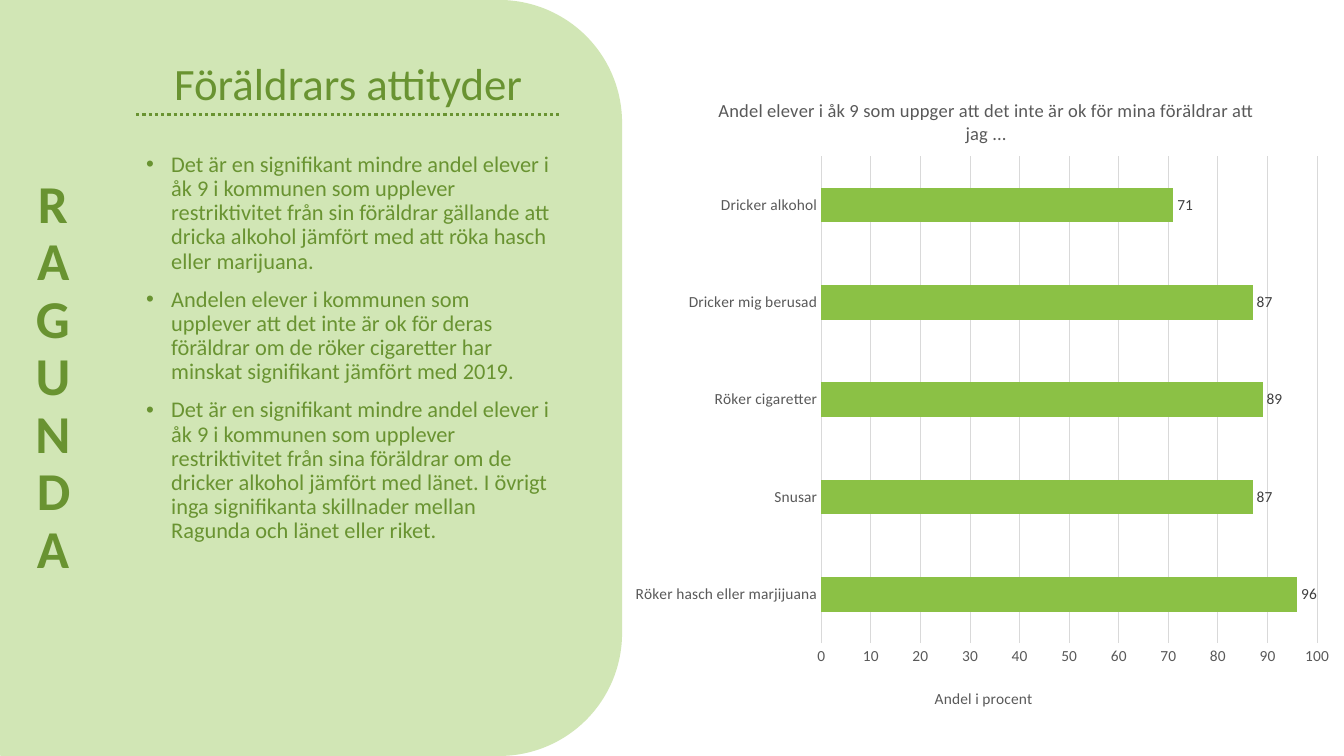
import lxml.etree
import pptx
import pptx.chart.data
import pptx.dml.color
import pptx.enum.chart
import pptx.enum.dml
import pptx.enum.shapes
import pptx.enum.text
import pptx.oxml
import pptx.oxml.ns
import pptx.util

Inches = pptx.util.Inches
Pt = pptx.util.Pt
qn = pptx.oxml.ns.qn

FONT = "Calibri"
COLORS = {
    "panel": "D1E6B5",
    "green": "699331",
    "bar": "8BC145",
    "axis": "595959",
    "value": "404040",
    "grid": "D9D9D9",
}
FINDINGS = [
    "Det är en signifikant mindre andel elever i åk 9 i kommunen som upplever restriktivitet "
    "från sin föräldrar gällande att dricka alkohol jämfört med att röka hasch eller marijuana.",
    "Andelen elever i kommunen som upplever att det inte är ok för deras föräldrar om de röker "
    "cigaretter har minskat signifikant jämfört med 2019.",
    "Det är en signifikant mindre andel elever i åk 9 i kommunen som upplever restriktivitet "
    "från sina föräldrar om de dricker alkohol jämfört med länet. I övrigt inga signifikanta "
    "skillnader mellan Ragunda och länet eller riket.",
]
SHARES = {
    "Röker hasch eller marjijuana": 96,
    "Snusar": 87,
    "Röker cigaretter": 89,
    "Dricker mig berusad": 87,
    "Dricker alkohol": 71,
}


def color(name):
    """Return the named colour."""
    return pptx.dml.color.RGBColor.from_string(COLORS[name])


def style_font(font, size, name, bold=False):
    """Apply the slide font with a size and colour."""
    font.name = FONT
    font.size = Pt(size)
    font.bold = bold
    font.color.rgb = color(name)


def add_text(slide, box, paragraphs, size, align, anchor, bold=False):
    """Add a wrapping green text box and return its text frame."""
    frame = slide.shapes.add_textbox(*map(Inches, box)).text_frame
    frame.word_wrap = True
    frame.vertical_anchor = anchor
    frame.text = "\n".join(paragraphs)
    for paragraph in frame.paragraphs:
        paragraph.alignment = align
        paragraph.line_spacing = 0.9
        style_font(paragraph.runs[0].font, size, "green", bold)
    return frame


def add_panel(slide, left, top, width, height):
    """Add the rounded green panel behind the text."""
    panel = slide.shapes.add_shape(
        pptx.enum.shapes.MSO_SHAPE.ROUNDED_RECTANGLE, *map(Inches, (left, top, width, height)))
    panel.shadow.inherit = False
    panel.fill.solid()
    panel.fill.fore_color.rgb = color("panel")
    panel.line.fill.background()


def add_municipality(slide, left, top, width, height):
    """Add the municipality name as stacked letters."""
    frame = add_text(slide, (left, top, width, height), ["RAGUNDA"], 38,
                     pptx.enum.text.PP_ALIGN.CENTER, pptx.enum.text.MSO_ANCHOR.BOTTOM, True)
    frame._txBody.find(qn("a:bodyPr")).set("vert", "wordArtVert")


def add_findings(slide, left, top, width, height):
    """Add the heading, its dotted rule and the bulleted findings."""
    rule_y = top + 0.81
    add_text(slide, (left - 0.26, top, width + 0.52, 0.81), ["Föräldrars attityder"], 32,
             pptx.enum.text.PP_ALIGN.CENTER, pptx.enum.text.MSO_ANCHOR.BOTTOM)
    rule = slide.shapes.add_connector(
        pptx.enum.shapes.MSO_CONNECTOR.STRAIGHT,
        *map(Inches, (left, rule_y, left + width, rule_y)))
    rule.line.color.rgb = color("green")
    rule.line.width = Pt(2.25)
    rule.line.dash_style = pptx.enum.dml.MSO_LINE.ROUND_DOT
    lxml.etree.SubElement(rule._element.spPr, qn("a:effectLst"))

    frame = add_text(slide, (left, rule_y + 0.33, width, height - 1.14), FINDINGS, 16,
                     pptx.enum.text.PP_ALIGN.LEFT, pptx.enum.text.MSO_ANCHOR.TOP)
    for paragraph in frame.paragraphs:
        paragraph.space_before = Pt(10)
        properties = paragraph._p.get_or_add_pPr()
        properties.set("marL", str(Inches(0.25)))
        properties.set("indent", str(-Inches(0.25)))
        lxml.etree.SubElement(properties, qn("a:buFont")).set("typeface", "Arial")
        lxml.etree.SubElement(properties, qn("a:buChar")).set("char", "•")


def place(element, index, target=None, **fractions):
    """Give a chart part a manual layout in fractions of the chart."""
    for old in element.findall(qn("c:layout")):
        element.remove(old)
    layout = lxml.etree.Element(qn("c:layout"))
    manual = lxml.etree.SubElement(layout, qn("c:manualLayout"))
    if target:
        lxml.etree.SubElement(manual, qn("c:layoutTarget")).set("val", target)
    for axis in "xy":
        lxml.etree.SubElement(manual, qn(f"c:{axis}Mode")).set("val", "edge")
    for key, value in fractions.items():
        lxml.etree.SubElement(manual, qn(f"c:{key}")).set("val", str(value))
    element.insert(index, layout)


def set_title(title, text, size, x, y):
    """Write and place a chart or axis title."""
    title.text_frame.text = text
    style_font(title.text_frame.paragraphs[0].runs[0].font, size, "axis")
    place(title._element, 1, x=x, y=y)


def add_attitude_chart(slide, left, top, width, height):
    """Add the bar chart of parental attitudes."""
    shares = pptx.chart.data.CategoryChartData(number_format="0")
    shares.categories = list(SHARES)
    shares.add_series("Series 1", list(SHARES.values()))
    chart = slide.shapes.add_chart(
        pptx.enum.chart.XL_CHART_TYPE.BAR_CLUSTERED,
        *map(Inches, (left, top, width, height)), shares).chart
    chart.has_legend = False
    chart.font.name = FONT
    chart.font.size = Pt(11)
    chart.has_title = True
    set_title(chart.chart_title,
              "Andel elever i åk 9 som uppger att det inte är ok för mina föräldrar att jag ...",
              13.2, 0.13, 0.04)

    plot = chart.plots[0]
    plot.gap_width = 182
    plot.vary_by_categories = False
    bars = plot.series[0].format.fill
    bars.solid()
    bars.fore_color.rgb = color("bar")
    plot.has_data_labels = True
    labels = plot.data_labels
    labels.show_value = True
    labels.number_format = "0"
    labels.number_format_is_linked = False
    labels.position = pptx.enum.chart.XL_LABEL_POSITION.OUTSIDE_END
    style_font(labels.font, 11, "value")

    for axis in (chart.category_axis, chart.value_axis):
        axis.major_tick_mark = pptx.enum.chart.XL_TICK_MARK.NONE
        axis.minor_tick_mark = pptx.enum.chart.XL_TICK_MARK.NONE
        style_font(axis.tick_labels.font, 11, "axis")
    percent = chart.value_axis
    percent.minimum_scale, percent.maximum_scale, percent.major_unit = 0, 100, 10
    percent.format.line.fill.background()
    percent.has_major_gridlines = True
    for line in (chart.category_axis.format.line, percent.major_gridlines.format.line):
        line.color.rgb = color("grid")
        line.width = Pt(0.75)
    set_title(percent.axis_title, "Andel i procent", 11, 0.43, 0.94)
    place(chart._chartSpace.chart.plotArea, 0, "inner", x=0.277, y=0.135, w=0.686, h=0.741)


def main():
    """Build and save the slide."""
    deck = pptx.Presentation()
    deck.slide_width, deck.slide_height = Inches(13.33), Inches(7.5)
    slide = deck.slides.add_slide(deck.slide_layouts[6])
    add_panel(slide, -1.14, 0, 7.31, 7.5)
    add_findings(slide, 1.35, 0.33, 4.21, 5.44)
    add_municipality(slide, 0, 0.12, 1.05, 7.27)
    add_attitude_chart(slide, 6.16, 0.67, 7.17, 6.52)
    deck.save("out.pptx")


if __name__ == "__main__":
    main()
